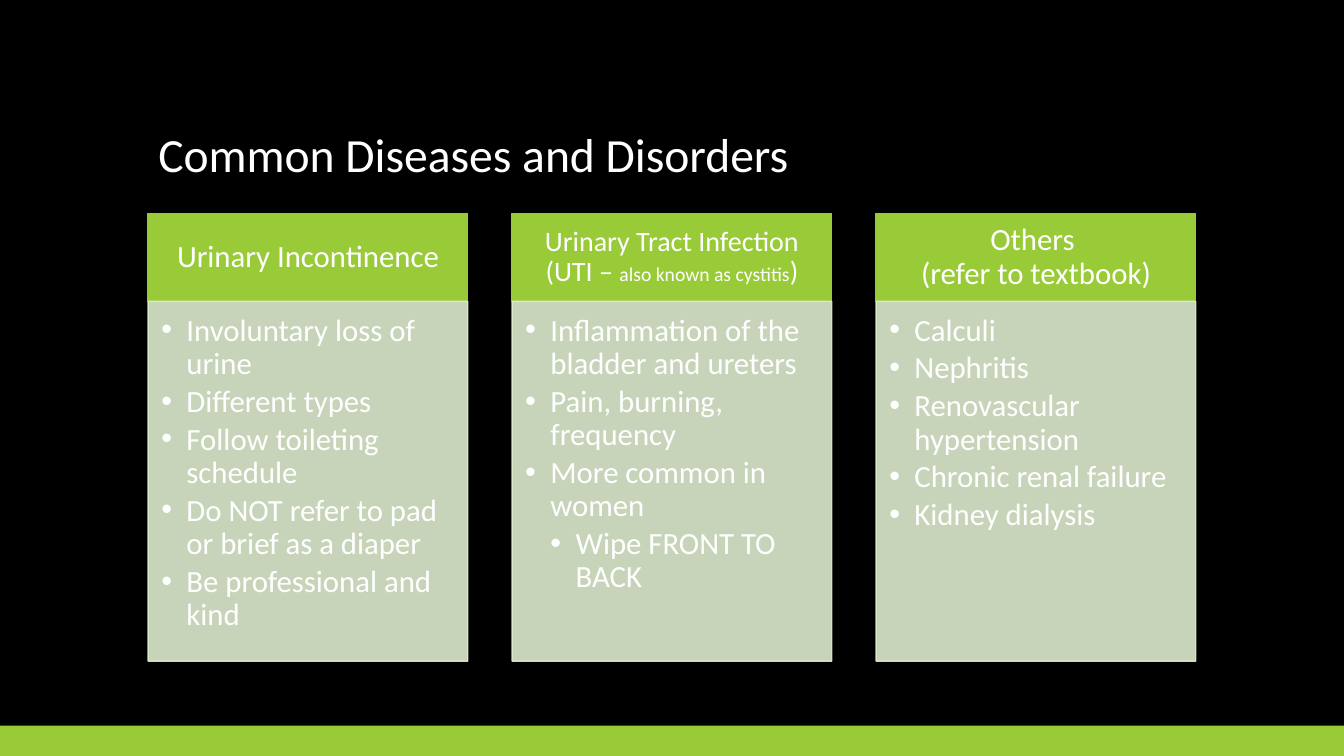
from dataclasses import dataclass

from lxml import etree
from pptx import Presentation
from pptx import util as u
from pptx.dml import color
from pptx.enum import shapes, text
from pptx.oxml import ns

BLACK = color.RGBColor(0x00, 0x00, 0x00)
WHITE = color.RGBColor(0xFF, 0xFF, 0xFF)
GREEN = color.RGBColor(0x99, 0xCB, 0x38)
PALE_GREEN = color.RGBColor(0xDE, 0xEC, 0xCE)
FONT = "Calibri"
LEFT, PITCH, WIDTH = 1.47, 3.61, 3.17
HEADER_TOP, HEADER_HEIGHT = 2.12, 0.87
LIST_TOP, LIST_HEIGHT = 2.99, 3.57
TEXT_SIZE = 22
INDENT = 0.25


@dataclass(frozen=True)
class Run:
    text: str
    size: int = TEXT_SIZE


@dataclass(frozen=True)
class Item:
    text: str
    level: int = 1


@dataclass(frozen=True)
class Column:
    header_lines: tuple[tuple[Run, ...], ...]
    items: tuple[Item, ...]


COLUMNS = (
    Column(
        ((Run("Urinary Incontinence"),),),
        (
            Item("Involuntary loss of urine"),
            Item("Different types"),
            Item("Follow toileting schedule"),
            Item("Do NOT refer to pad or brief as a diaper"),
            Item("Be professional and kind"),
        ),
    ),
    Column(
        ((Run("Urinary Tract Infection (UTI – ", 20), Run("also known as cystitis", 14), Run(")", 20)),),
        (
            Item("Inflammation of the bladder and ureters"),
            Item("Pain, burning, frequency"),
            Item("More common in women"),
            Item("Wipe FRONT TO BACK", 2),
        ),
    ),
    Column(
        ((Run("Others "),), (Run("(refer to textbook)"),)),
        (
            Item("Calculi"),
            Item("Nephritis"),
            Item("Renovascular hypertension"),
            Item("Chronic renal failure"),
            Item("Kidney dialysis"),
        ),
    ),
)


def add_box(slide, left: float, top: float, width: float, height: float, fill: color.RGBColor):
    shape = slide.shapes.add_shape(
        shapes.MSO_SHAPE.RECTANGLE, u.Inches(left), u.Inches(top), u.Inches(width), u.Inches(height)
    )
    shape.shadow.inherit = False
    shape.fill.solid()
    shape.fill.fore_color.rgb = fill
    shape.line.color.rgb = fill
    shape.line.width = u.Pt(1)
    return shape


def set_insets(frame, left: float, top: float, right: float, bottom: float) -> None:
    frame.word_wrap = True
    frame.margin_left, frame.margin_top = u.Inches(left), u.Inches(top)
    frame.margin_right, frame.margin_bottom = u.Inches(right), u.Inches(bottom)


def format_paragraph(paragraph, alignment, size: float | None = None) -> None:
    paragraph.alignment = alignment
    paragraph.line_spacing = 0.9
    paragraph.font.name = FONT
    paragraph.font.color.rgb = WHITE
    if size is not None:
        paragraph.font.size = u.Pt(size)


def add_bullet(paragraph, level: int) -> None:
    properties = paragraph._p.get_or_add_pPr()
    properties.set("marL", str(u.Inches(INDENT * level)))
    properties.set("indent", str(u.Inches(-INDENT)))
    etree.SubElement(properties, ns.qn("a:buFont")).set("typeface", "Arial")
    etree.SubElement(properties, ns.qn("a:buChar")).set("char", "•")


def add_header(slide, left: float, lines: tuple[tuple[Run, ...], ...]) -> None:
    shape = add_box(slide, left, HEADER_TOP, WIDTH, HEADER_HEIGHT, GREEN)
    frame = shape.text_frame
    set_insets(frame, 0.16, 0.1, 0.16, 0.1)
    frame.vertical_anchor = text.MSO_ANCHOR.MIDDLE
    paragraph = frame.paragraphs[0]
    format_paragraph(paragraph, text.PP_ALIGN.CENTER)
    for number, line in enumerate(lines):
        if number:
            paragraph.add_line_break()
        for part in line:
            run = paragraph.add_run()
            run.text = part.text
            run.font.size = u.Pt(part.size)


def add_list(slide, left: float, items: tuple[Item, ...]) -> None:
    shape = add_box(slide, left, LIST_TOP, WIDTH, LIST_HEIGHT, PALE_GREEN)
    for tint in shape.element.spPr.iter(ns.qn("a:srgbClr")):
        etree.SubElement(tint, ns.qn("a:alpha")).set("val", "90000")
    frame = shape.text_frame
    set_insets(frame, 0.13, 0.13, 0.17, 0.19)
    frame.vertical_anchor = text.MSO_ANCHOR.TOP
    for number, item in enumerate(items):
        paragraph = frame.add_paragraph() if number else frame.paragraphs[0]
        paragraph.text = item.text
        paragraph.level = item.level
        paragraph.space_after = u.Pt(0.15 * TEXT_SIZE)
        add_bullet(paragraph, item.level)
        format_paragraph(paragraph, text.PP_ALIGN.LEFT, TEXT_SIZE)


def add_title(slide, wording: str) -> None:
    title = slide.shapes.title
    title.left, title.top = u.Inches(LEFT), u.Inches(0.51)
    title.width, title.height = u.Inches(10.4), u.Inches(1.35)
    frame = title.text_frame
    frame.text = wording
    frame.auto_size = text.MSO_AUTO_SIZE.NONE
    frame.vertical_anchor = text.MSO_ANCHOR.BOTTOM
    format_paragraph(frame.paragraphs[0], text.PP_ALIGN.LEFT, 34)


def main() -> None:
    presentation = Presentation()
    presentation.slide_width, presentation.slide_height = u.Inches(13.33), u.Inches(7.5)
    slide = presentation.slides.add_slide(presentation.slide_layouts[5])
    slide.background.fill.solid()
    slide.background.fill.fore_color.rgb = BLACK
    footer_bar = add_box(slide, 0, 7.2, 13.33, 0.3, GREEN)
    footer_bar.line.fill.background()
    add_title(slide, "Common Diseases and Disorders")
    for number, column in enumerate(COLUMNS):
        left = LEFT + number * PITCH
        add_header(slide, left, column.header_lines)
        add_list(slide, left, column.items)
    presentation.save("out.pptx")


if __name__ == "__main__":
    main()
